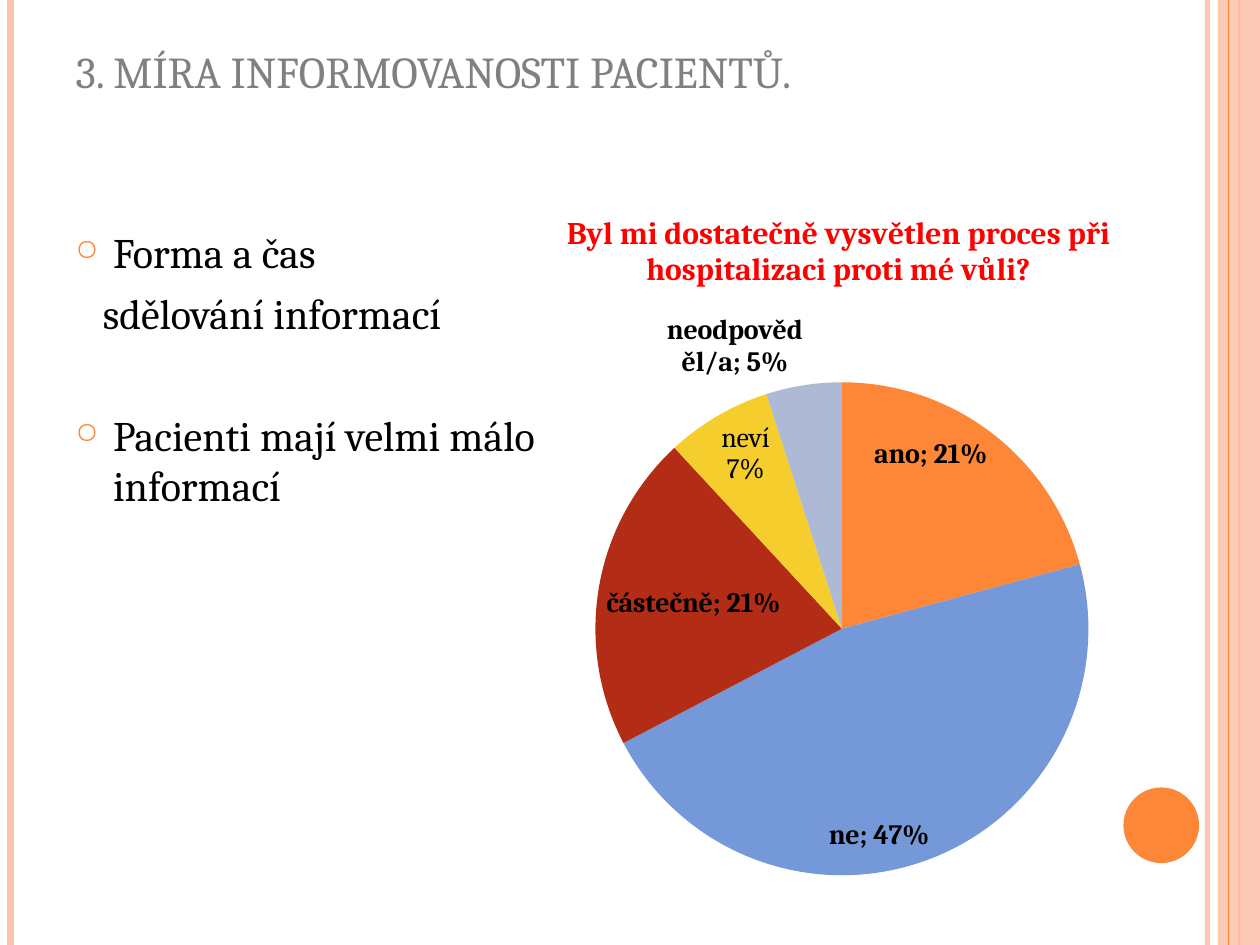
import pptx
import pptx.chart.data
import pptx.dml.color
import pptx.enum.chart
import pptx.enum.shapes
import pptx.enum.text
import pptx.oxml
import pptx.oxml.ns
import pptx.util
from lxml import etree

Pt = pptx.util.Pt
RGBColor = pptx.dml.color.RGBColor
LabelPosition = pptx.enum.chart.XL_LABEL_POSITION
qn = pptx.oxml.ns.qn

ORANGE = RGBColor(0xFE, 0x86, 0x37)
PEACH = RGBColor(0xFE, 0xC3, 0xAE)
BLUE = RGBColor(0x75, 0x98, 0xD9)
BRICK = RGBColor(0xB3, 0x2C, 0x16)
YELLOW = RGBColor(0xF5, 0xCD, 0x2D)
LAVENDER = RGBColor(0xAE, 0xBA, 0xD5)
GRAY = RGBColor(0x80, 0x80, 0x80)
RED = RGBColor(0xFF, 0, 0)
BLACK = RGBColor(0, 0, 0)
FONT = "Cambria"
SLIDE_HEIGHT = 540


class SlideBuilder:
    def __init__(self, slide):
        self.slide = slide

    def style(self, font, size, color=BLACK, bold=False):
        font.name = FONT
        font.size = Pt(size)
        font.bold = bold
        font.color.rgb = color

    def set_alpha(self, shape, percent):
        color = next(shape._element.spPr.iter(qn("a:srgbClr")))
        etree.SubElement(color, qn("a:alpha")).set("val", str(percent * 1000))

    def vertical_line(self, x, width, color, alpha=100):
        line = self.slide.shapes.add_connector(
            pptx.enum.shapes.MSO_CONNECTOR.STRAIGHT, Pt(x), 0, Pt(x), Pt(SLIDE_HEIGHT))
        line.line.color.rgb = color
        line.line.width = Pt(width)
        etree.SubElement(line._element.spPr, qn("a:effectLst"))
        if alpha < 100:
            self.set_alpha(line, alpha)

    def filled_shape(self, kind, left, top, width, height, color, alpha=100):
        shape = self.slide.shapes.add_shape(kind, Pt(left), Pt(top), Pt(width), Pt(height))
        shape.shadow.inherit = False
        shape.fill.solid()
        shape.fill.fore_color.rgb = color
        shape.line.fill.background()
        if alpha < 100:
            self.set_alpha(shape, alpha)

    def title(self, text, left, top, width, height):
        title = self.slide.shapes.title
        title.left, title.top, title.width, title.height = map(Pt, (left, top, width, height))
        frame = title.text_frame
        frame.text = text
        frame.word_wrap = True
        frame.vertical_anchor = pptx.enum.text.MSO_ANCHOR.TOP
        paragraph = frame.paragraphs[0]
        paragraph.alignment = pptx.enum.text.PP_ALIGN.LEFT
        self.style(paragraph.font, 25.2, GRAY)

    def bullet_list(self, items, left, top, width, height):
        box = self.slide.shapes.add_textbox(Pt(left), Pt(top), Pt(width), Pt(height))
        frame = box.text_frame
        frame.word_wrap = True
        for index, (text, bulleted, space) in enumerate(items):
            paragraph = frame.paragraphs[0] if index == 0 else frame.add_paragraph()
            paragraph.text = text
            paragraph.space_before = Pt(space)
            self.style(paragraph.font, 24)
            properties = paragraph._p.get_or_add_pPr()
            properties.set("marL", str(Pt(21.6 if bulleted else 15.7)))
            if bulleted:
                properties.set("indent", str(-Pt(21.6)))
                color = etree.SubElement(properties, qn("a:buClr"))
                etree.SubElement(color, qn("a:srgbClr")).set("val", str(ORANGE))
                etree.SubElement(properties, qn("a:buSzPct")).set("val", "70000")
                etree.SubElement(properties, qn("a:buChar")).set("char", "○")
                properties.append(properties.find(qn("a:defRPr")))

    def pie_chart(self, title, slices, left, top, width, height, plot_layout):
        data = pptx.chart.data.CategoryChartData()
        data.categories = [name for name, value, color in slices]
        data.add_series("Series 1", [value for name, value, color in slices])
        chart = self.slide.shapes.add_chart(
            pptx.enum.chart.XL_CHART_TYPE.PIE,
            Pt(left), Pt(top), Pt(width), Pt(height), data).chart
        self.style(chart.font, 10)
        chart.has_legend = False
        chart.has_title = True
        chart.chart_title.include_in_layout = False
        chart.chart_title.text_frame.text = title
        self.style(chart.chart_title.text_frame.paragraphs[0].font, 18, RED, True)
        plot = chart.plots[0]
        plot.vary_by_categories = True
        plot.has_data_labels = True
        labels = plot.data_labels
        labels.show_value = False
        labels.show_category_name = True
        labels.show_percentage = True
        labels.position = LabelPosition.INSIDE_END
        self.style(labels.font, 16, bold=True)
        points = plot.series[0].points
        for index, (name, value, color) in enumerate(slices):
            points[index].format.fill.solid()
            points[index].format.fill.fore_color.rgb = color
            label = points[index].data_label
            label.position = LabelPosition.INSIDE_END
            self.style(label.font, 16, bold=True)
        self.place_plot(chart, plot_layout)
        return chart

    def place_plot(self, chart, plot_layout):
        area = chart._chartSpace.chart.plotArea
        for old in area.findall(qn("c:layout")):
            area.remove(old)
        layout = etree.Element(qn("c:layout"))
        manual = etree.SubElement(layout, qn("c:manualLayout"))
        values = zip("xywh", plot_layout)
        settings = [("layoutTarget", "inner"), ("xMode", "edge"), ("yMode", "edge"), *values]
        for name, value in settings:
            etree.SubElement(manual, qn("c:" + name)).set("val", str(value))
        area.insert(0, layout)
        for label in area.iter(qn("c:dLbl")):
            for name, value in (("showVal", "0"), ("showCatName", "1"), ("showPercent", "1")):
                label.find(qn("c:" + name)).set("val", value)

    def custom_label(self, chart, index, lines):
        frame = chart.plots[0].series[0].points[index].data_label.text_frame
        frame.text = "\n".join(lines)
        for paragraph in frame.paragraphs:
            for run in paragraph.runs:
                self.style(run.font, 16)


def main():
    presentation = pptx.Presentation()
    presentation.slide_width = Pt(720)
    presentation.slide_height = Pt(SLIDE_HEIGHT)
    builder = SlideBuilder(presentation.slides.add_slide(presentation.slide_layouts[5]))
    shapes = pptx.enum.shapes.MSO_SHAPE

    builder.vertical_line(690, 3, PEACH, 93)
    builder.vertical_line(6, 4.5, PEACH)
    builder.vertical_line(708, 1.5, ORANGE)
    builder.filled_shape(shapes.RECTANGLE, 696, 0, 24, SLIDE_HEIGHT, PEACH, 87)
    builder.vertical_line(702, 0.75, ORANGE)
    builder.filled_shape(shapes.OVAL, 642, 450, 43.2, 43.2, ORANGE)

    builder.title("3. MÍRA INFORMOVANOSTI PACIENTŮ.", 36, 21.6, 588, 55.4)
    builder.bullet_list([
        ("Forma a čas", True, 6),
        ("sdělování informací", False, 6),
        ("Pacienti mají velmi málo informací", True, 40.6),
    ], 36, 126, 288, 360)
    chart = builder.pie_chart(
        "Byl mi dostatečně vysvětlen proces při hospitalizaci proti mé vůli?",
        [("ano", 21, ORANGE), ("ne", 47, BLUE), ("částečně", 21, BRICK),
         ("nevím", 7, YELLOW), ("neodpověděl/a", 5, LAVENDER)],
        280.8, 105.8, 396.7, 402.5, (0.02, 0.28, 0.97, 0.7))
    builder.custom_label(chart, 3, ["neví", "7%"])
    chart.plots[0].series[0].points[4].data_label.position = LabelPosition.OUTSIDE_END
    presentation.save("out.pptx")


if __name__ == "__main__":
    main()
